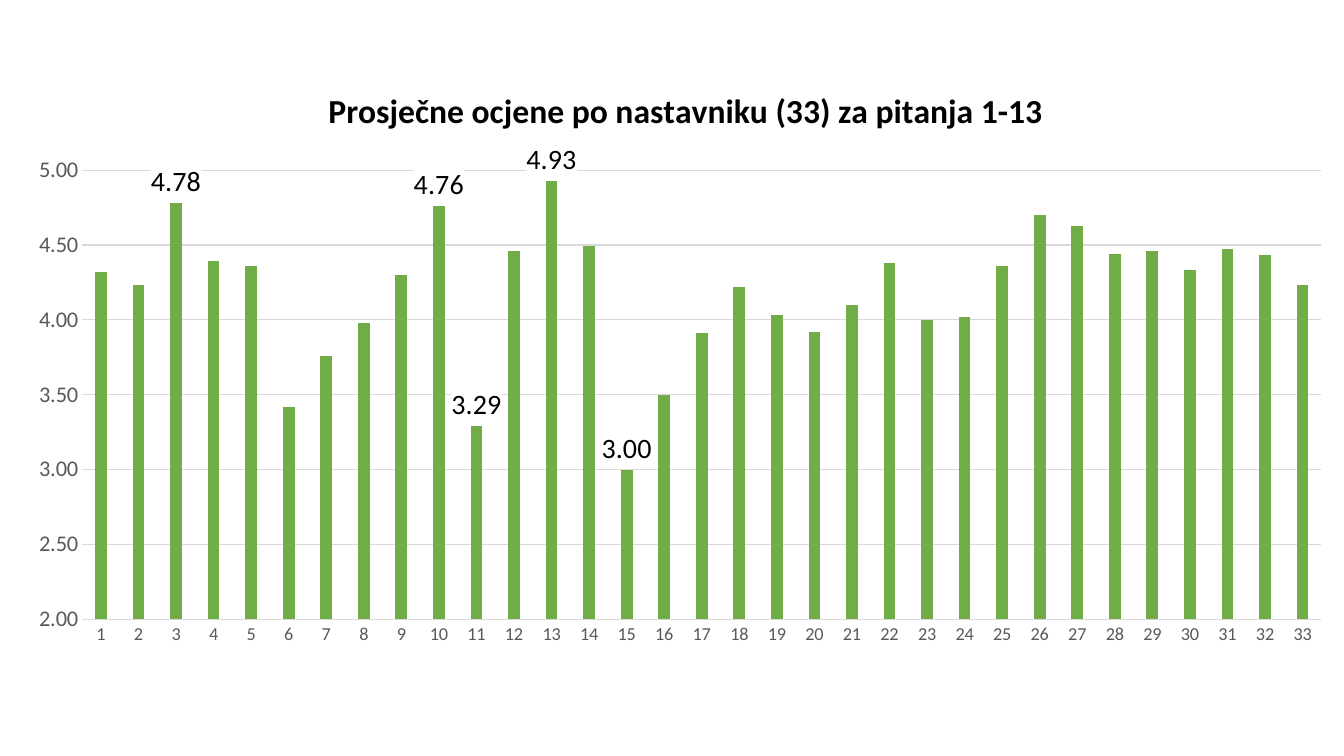
from dataclasses import dataclass

from lxml import etree
from pptx import Presentation
from pptx import util as u
from pptx.chart.data import CategoryChartData
from pptx.dml.color import RGBColor
from pptx.enum import chart as ch
from pptx.oxml import parse_xml
from pptx.oxml.ns import nsdecls, qn


@dataclass(frozen=True)
class Theme:
    font: str = "Calibri"
    bar: str = "70AD47"
    grid: str = "D9D9D9"
    tick: str = "595959"
    ink: str = "000000"
    paper: str = "FFFFFF"
    title: int = 24
    label: int = 20
    scale: int = 16
    names: int = 13
    line: float = 0.75


THEME = Theme()
WIDE, HIGH = 13.33, 7.5
TITLE = "Prosječne ocjene po nastavniku (33) za pitanja 1-13"
MARKS = [
    4.32, 4.23, 4.78, 4.39, 4.36, 3.42, 3.76, 3.98, 4.30, 4.76, 3.29,
    4.46, 4.93, 4.49, 3.00, 3.50, 3.91, 4.22, 4.03, 3.92, 4.10, 4.38,
    4.00, 4.02, 4.36, 4.70, 4.63, 4.44, 4.46, 4.33, 4.47, 4.43, 4.23,
]
LABELED = (3, 10, 11, 13, 15)


def style(font, size, color, bold=False):
    font.name = THEME.font
    font.size = u.Pt(size)
    font.bold = bold
    font.color.rgb = RGBColor.from_string(color)


def rule(line):
    line.width = u.Pt(THEME.line)
    line.color.rgb = RGBColor.from_string(THEME.grid)


def layout(**parts):
    """Return a manual chart layout, in shares of the chart's size."""
    node = parse_xml(f"<c:layout {nsdecls('c')}><c:manualLayout/></c:layout>")
    for tag, value in parts.items():
        etree.SubElement(node[0], qn(f"c:{tag}")).set("val", str(value))
    return node


def head(chart):
    chart.has_title = True
    frame = chart.chart_title.text_frame
    run = frame.paragraphs[0].add_run()
    run.text = TITLE
    style(run.font, THEME.title, THEME.ink, True)
    title = chart.chart_title._element
    for old in title.findall(qn("c:layout")):
        title.remove(old)
    title.find(qn("c:tx")).addnext(
        layout(xMode="edge", yMode="edge", x=0.23, y=0.04))


def axes(chart):
    names, scale = chart.category_axis, chart.value_axis
    for axis, size in ((names, THEME.names), (scale, THEME.scale)):
        style(axis.tick_labels.font, size, THEME.tick)
        axis.major_tick_mark = axis.minor_tick_mark = ch.XL_TICK_MARK.NONE
    rule(names.format.line)
    scale.format.line.fill.background()
    scale.minimum_scale, scale.maximum_scale = 2, 5
    scale.major_unit = 0.5
    scale.tick_labels.number_format = "0.00"
    scale.tick_labels.number_format_is_linked = False
    scale.has_major_gridlines = True
    rule(scale.major_gridlines.format.line)


def bars(chart):
    plot = chart.plots[0]
    plot.gap_width, plot.overlap = 219, -27
    plot.vary_by_categories = False
    series = plot.series[0]
    series.format.fill.solid()
    series.format.fill.fore_color.rgb = RGBColor.from_string(THEME.bar)
    series.data_labels.show_value = False
    for number in LABELED:
        label = series.points[number - 1].data_label
        style(label.font, THEME.label, THEME.ink)
        label.position = ch.XL_LABEL_POSITION.OUTSIDE_END
    for node in series._element.iter(qn("c:dLbl")):
        for old in node.findall(qn("c:spPr")):
            node.remove(old)
        node.find(qn("c:txPr")).addprevious(parse_xml(
            f"<c:spPr {nsdecls('c', 'a')}><a:solidFill>"
            f'<a:srgbClr val="{THEME.paper}"/></a:solidFill></c:spPr>'))


def ratings(slide, left, top, width, height):
    data = CategoryChartData(number_format="0.00")
    data.categories = [str(n) for n in range(1, len(MARKS) + 1)]
    data.add_series("Series 1", MARKS)
    box = [u.Inches(x) for x in (left, top, width, height)]
    chart = slide.shapes.add_chart(
        ch.XL_CHART_TYPE.COLUMN_CLUSTERED, *box, data).chart
    chart.has_legend = False
    style(chart.font, 10, THEME.ink)
    head(chart)
    axes(chart)
    bars(chart)
    area = chart._chartSpace.find(qn("c:chart")).find(qn("c:plotArea"))
    for old in area.findall(qn("c:layout")):
        area.remove(old)
    area.insert(0, layout(layoutTarget="inner", xMode="edge", yMode="edge",
                          x=0.049, y=0.181, w=0.934, h=0.721))


def main():
    deck = Presentation()
    deck.slide_width, deck.slide_height = u.Inches(WIDE), u.Inches(HIGH)
    slide = deck.slides.add_slide(deck.slide_layouts[6])
    left, top = 0.17, 0.57
    ratings(slide, left, top, WIDE - left, 6.18)
    deck.save("out.pptx")


if __name__ == "__main__":
    main()
